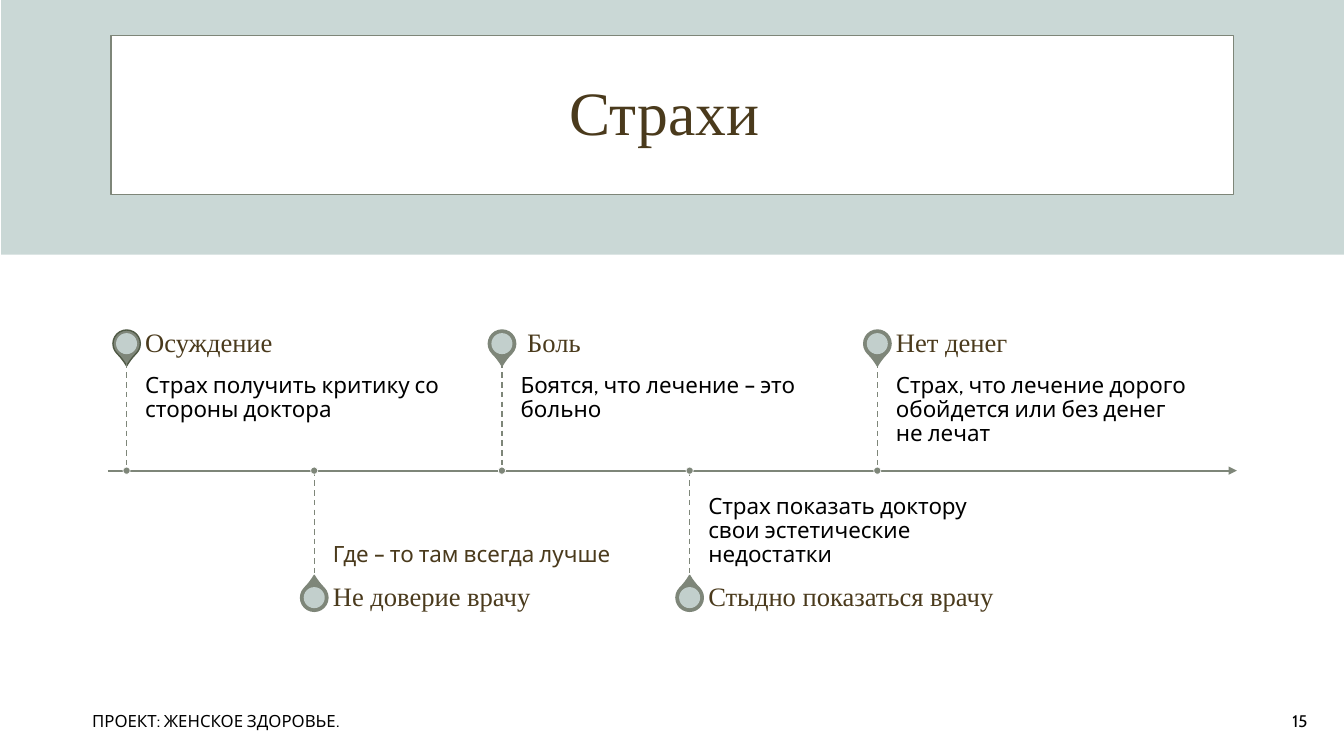
from dataclasses import dataclass

from lxml import etree
from pptx import Presentation
from pptx.dml.color import RGBColor
from pptx.enum.dml import MSO_LINE
from pptx.enum.shapes import MSO_CONNECTOR, MSO_SHAPE
from pptx.enum.text import MSO_ANCHOR, MSO_AUTO_SIZE, PP_ALIGN
from pptx.oxml.ns import qn
from pptx.util import Cm, Pt

RECTANGLE, OVAL, TEARDROP = MSO_SHAPE.RECTANGLE, MSO_SHAPE.OVAL, MSO_SHAPE.TEAR
STRAIGHT = MSO_CONNECTOR.STRAIGHT
DASH = MSO_LINE.DASH
TOP, MIDDLE, BOTTOM = MSO_ANCHOR.TOP, MSO_ANCHOR.MIDDLE, MSO_ANCHOR.BOTTOM
LEFT, CENTER, RIGHT = PP_ALIGN.LEFT, PP_ALIGN.CENTER, PP_ALIGN.RIGHT
NO_AUTOFIT = MSO_AUTO_SIZE.NONE

COLORS = {
    "mist": "CAD8D6",
    "sage": "7E8679",
    "moss": "4F5945",
    "brown": "4A3A1C",
    "black": "000000",
    "white": "FFFFFF",
}
SERIF, SANS = "Times New Roman", "Cabin"

FIRST_X, STEP_X, AXIS_Y = 3.19, 4.73, 11.86
PIN_REACH, STEM_LENGTH = 3.2, 2.72
PIN_SIZE, PIN_HOLE_SIZE, DOT_SIZE = 0.69, 0.53, 0.18
TEXT_OFFSET, TEXT_WIDTH, HEADING_HEIGHT = 0.47, 7.87, 0.97


@dataclass
class Box:
    left: float
    top: float
    width: float
    height: float

    def lengths(self):
        return Cm(self.left), Cm(self.top), Cm(self.width), Cm(self.height)


@dataclass
class TextStyle:
    font: str
    size: float
    color: str
    align: PP_ALIGN = LEFT
    anchor: MSO_ANCHOR = MIDDLE
    insets: tuple = (0.25, 0.13, 0.25, 0.13)
    spacing: float = 1.0


@dataclass
class Fear:
    heading: str
    detail: str
    above: bool
    detail_color: str = "black"
    pin_outline: str = "sage"


FEARS = [
    Fear("Осуждение", "Страх получить критику со стороны доктора", True, pin_outline="moss"),
    Fear("Не доверие врачу", "Где – то там всегда лучше", False, detail_color="brown"),
    Fear(" Боль", "Боятся, что лечение – это больно", True),
    Fear("Стыдно показаться врачу", "Страх показать доктору свои эстетические недостатки", False),
    Fear("Нет денег", "Страх, что лечение дорого обойдется или без денег не лечат", True),
]


def rgb(color: str) -> RGBColor:
    return RGBColor.from_string(COLORS[color])


def square(x: float, y: float, size: float) -> Box:
    return Box(x - size / 2, y - size / 2, size, size)


def write(shape, text: str, style: TextStyle) -> None:
    frame = shape.text_frame
    frame.text = text
    frame.word_wrap = True
    frame.auto_size = NO_AUTOFIT
    frame.vertical_anchor = style.anchor
    (frame.margin_left, frame.margin_top,
     frame.margin_right, frame.margin_bottom) = map(Cm, style.insets)
    paragraph = frame.paragraphs[0]
    paragraph.alignment = style.align
    paragraph.line_spacing = style.spacing
    for run in paragraph.runs:
        run.font.name = style.font
        run.font.size = Pt(style.size)
        run.font.color.rgb = rgb(style.color)


def add_text(slide, box: Box, text: str, style: TextStyle) -> None:
    write(slide.shapes.add_textbox(*box.lengths()), text, style)


def add_figure(slide, kind, box: Box, fill: str, outline: str = "", width: float = 1):
    figure = slide.shapes.add_shape(kind, *box.lengths())
    figure.shadow.inherit = False
    figure.fill.solid()
    figure.fill.fore_color.rgb = rgb(fill)
    if outline:
        figure.line.color.rgb = rgb(outline)
        figure.line.width = Pt(width)
    else:
        figure.line.fill.background()
    return figure


def add_line(slide, x1: float, y1: float, x2: float, y2: float, width: float):
    line = slide.shapes.add_connector(STRAIGHT, Cm(x1), Cm(y1), Cm(x2), Cm(y2))
    line.line.color.rgb = rgb("sage")
    line.line.width = Pt(width)
    etree.SubElement(line.element.spPr, qn("a:effectLst"))
    return line


def add_header(slide) -> None:
    add_figure(slide, RECTANGLE, Box(0.03, 0, 33.84, 6.42), "mist")
    add_figure(slide, RECTANGLE, Box(2.8, 0.9, 28.29, 4.01), "white", "sage")
    title = slide.shapes.title
    title.left, title.top, title.width, title.height = Box(1.07, 1.07, 31.75, 3.68).lengths()
    write(title, "Страхи ", TextStyle(SERIF, 44, "brown", CENTER, spacing=0.9))
    title.element.getparent().append(title.element)


def add_axis(slide) -> None:
    axis = add_line(slide, 2.72, AXIS_Y, 31.17, AXIS_Y, 1.5)
    etree.SubElement(axis.line._get_or_add_ln(), qn("a:tailEnd"), type="triangle")


def add_pin(slide, x: float, y: float, fear: Fear) -> None:
    pin = add_figure(slide, TEARDROP, square(x, y, PIN_SIZE), "sage", fear.pin_outline)
    pin.adjustments[0] = 1.15
    pin.rotation = 135 if fear.above else 315
    hole = add_figure(slide, OVAL, square(x, y, PIN_HOLE_SIZE), "mist")
    hole_color = hole.element.spPr.find(qn("a:solidFill"))[0]
    etree.SubElement(hole_color, qn("a:alpha"), val="90000")


def add_fear(slide, x: float, fear: Fear) -> None:
    side = -1 if fear.above else 1
    pin_y = AXIS_Y + side * PIN_REACH
    stem_end = AXIS_Y + side * STEM_LENGTH
    text_left = x + TEXT_OFFSET
    add_pin(slide, x, pin_y, fear)
    add_text(
        slide,
        Box(text_left, min(AXIS_Y, stem_end), TEXT_WIDTH, STEM_LENGTH),
        fear.detail,
        TextStyle(
            SANS, 16, fear.detail_color,
            anchor=TOP if fear.above else BOTTOM,
            insets=(0, 0.28, 0.28, 0.43) if fear.above else (0, 0.43, 0, 0.28),
            spacing=0.9,
        ),
    )
    add_text(
        slide,
        Box(text_left, pin_y - HEADING_HEIGHT / 2, TEXT_WIDTH, HEADING_HEIGHT),
        fear.heading,
        TextStyle(SERIF, 19, "brown", insets=(0, 0, 0.33, 0), spacing=0.9),
    )
    stem = add_line(slide, x, min(AXIS_Y, stem_end), x, max(AXIS_Y, stem_end), 1)
    stem.line.dash_style = DASH
    add_figure(slide, OVAL, square(x, AXIS_Y, DOT_SIZE), "sage", "white", 0.5)


def main() -> None:
    deck = Presentation()
    deck.slide_width, deck.slide_height = Cm(33.87), Cm(19.05)
    slide = deck.slides.add_slide(deck.slide_layouts[5])
    add_header(slide)
    add_axis(slide)
    for index, fear in enumerate(FEARS):
        add_fear(slide, FIRST_X + index * STEP_X, fear)
    footer_style = TextStyle(SANS, 12, "black", RIGHT)
    add_text(slide, Box(1, 17.65, 7.81, 1.02), "ПРОЕКТ: ЖЕНСКОЕ ЗДОРОВЬЕ.", footer_style)
    add_text(slide, Box(25.58, 17.65, 7.62, 1.02), "15", footer_style)
    deck.save("out.pptx")


if __name__ == "__main__":
    main()
